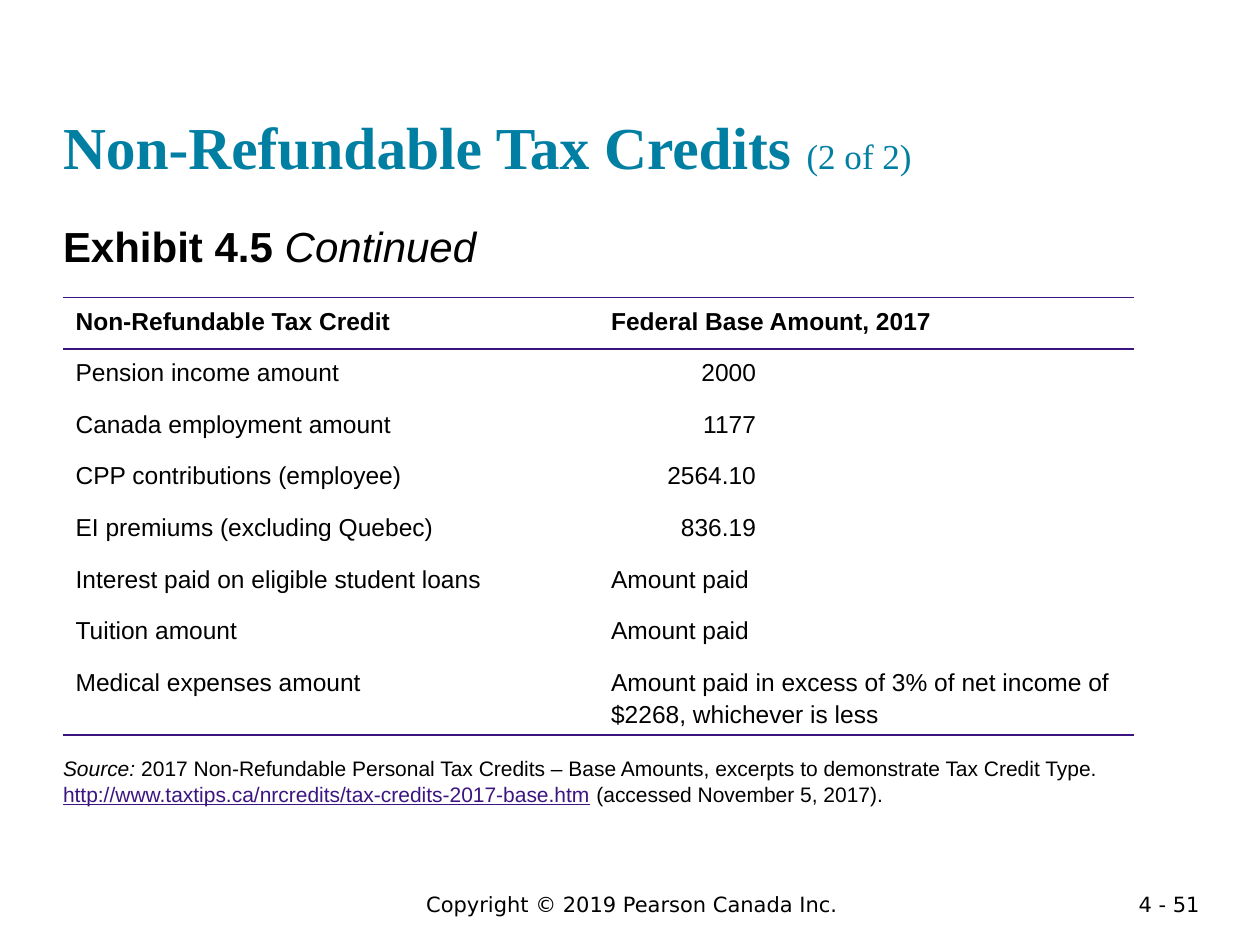
import pptx
import pptx.dml.color
import pptx.enum.text
import pptx.oxml
import pptx.oxml.ns
import pptx.util

Inches, Pt = pptx.util.Inches, pptx.util.Pt
ALIGN, ANCHOR = pptx.enum.text.PP_ALIGN, pptx.enum.text.MSO_ANCHOR
TEAL, PURPLE, BLACK = "007FA3", "3C1581", "000000"

# Content: runs are (text, font settings)
TITLE = [("Non-Refundable Tax Credits ", {"size": Pt(34), "bold": True}),
         ("(2 of 2)", {"size": Pt(20), "bold": False})]
EXHIBIT = [("Exhibit 4.5 ", {"bold": True}), ("Continued", {"italic": True})]
SOURCE = [
    ("Source: ", {"italic": True}),
    ("2017 Non-Refundable Personal Tax Credits – Base Amounts, "
     "excerpts to demonstrate Tax Credit Type. ", {}),
    ("http://www.taxtips.ca/nrcredits/tax-credits-2017-base.htm",
     {"color": PURPLE, "underline": True}),
    (" (accessed November 5, 2017).", {}),
]
CREDITS = [
    ("Non-Refundable Tax Credit", "Federal Base Amount, 2017"),
    ("Pension income amount", "2000"),
    ("Canada employment amount", "1177"),
    ("CPP contributions (employee)", "2564.10"),
    ("EI premiums (excluding Quebec)", "836.19"),
    ("Interest paid on eligible student loans", "Amount paid"),
    ("Tuition amount", "Amount paid"),
    ("Medical expenses amount",
     "Amount paid in excess of 3% of net income of $2268, whichever is less"),
]
FOOTERS = [
    ("Copyright © 2019 Pearson Canada Inc.", (1.64, 7.03, 6.75, 0.3), ALIGN.CENTER),
    ("4 - 51", (8.62, 7.03, 1, 0.22), ALIGN.RIGHT),
]
ROW_HEIGHT, COLUMN_WIDTH = 0.41, 4.25
RULED_EDGES = {0, 1, len(CREDITS)}


def set_color(font, color):
    font.color.rgb = pptx.dml.color.RGBColor.from_string(color)


def set_font(font, name, size, color=BLACK):
    font.name, font.size = name, Pt(size)
    set_color(font, color)


def fill_placeholder(holder, box, runs, name, size, color=BLACK, anchor=ANCHOR.TOP):
    holder.left, holder.top, holder.width, holder.height = map(Inches, box)
    frame = holder.text_frame
    frame.margin_left = frame.margin_top = frame.margin_right = frame.margin_bottom = 0
    frame.word_wrap, frame.vertical_anchor = True, anchor
    frame.auto_size = pptx.enum.text.MSO_AUTO_SIZE.NONE
    paragraph = frame.paragraphs[0]
    properties = paragraph._p.get_or_add_pPr()
    properties.set("marL", "0")
    properties.set("indent", "0")
    pptx.oxml.ns.qn("a:buNone")
    properties.append(pptx.oxml.parse_xml(
        f'<a:buNone {pptx.oxml.ns.nsdecls("a")}/>'))
    paragraph.alignment = ALIGN.LEFT
    paragraph.space_before = Pt(0)
    set_font(paragraph.font, name, size, color)
    for text, settings in runs:
        run = paragraph.add_run()
        run.text = text
        set_font(run.font, name, size, settings.get("color", color))
        for key in settings.keys() - {"color"}:
            setattr(run.font, key, settings[key])


def rule_cell(cell, row):
    ruled = {"T": row in RULED_EDGES, "B": row + 1 in RULED_EDGES}
    for side in "LRTB":
        paint = (f'<a:solidFill><a:srgbClr val="{PURPLE}"/></a:solidFill>'
                 if ruled.get(side) else "<a:noFill/>")
        cell._tc.get_or_add_tcPr().append(pptx.oxml.parse_xml(
            f'<a:ln{side} {pptx.oxml.ns.nsdecls("a")} w="12700">{paint}</a:ln{side}>'))
    cell.fill.background()


deck = pptx.Presentation()
deck.slide_width, deck.slide_height = Inches(10), Inches(7.5)
slide = deck.slides.add_slide(deck.slide_layouts.get_by_name("Two Content"))
title, exhibit, source = slide.placeholders

# Title, exhibit heading and source
fill_placeholder(title, (0.5, 0.24, 9, 1.2), TITLE, "Times New Roman", 34, TEAL,
                 ANCHOR.BOTTOM)
fill_placeholder(exhibit, (0.5, 1.75, 9, 0.5), EXHIBIT, "Arial", 24)
fill_placeholder(source, (0.5, 6, 8.5, 0.5), SOURCE, "Arial", 12)

# Tax credit table
credit_table = slide.shapes.add_table(
    len(CREDITS), 2, Inches(0.5), Inches(2.36), Inches(2 * COLUMN_WIDTH),
    Inches(ROW_HEIGHT * len(CREDITS))).table
credit_table.first_row = True
credit_table.horz_banding = False
for row, values in enumerate(CREDITS):
    for column, text in enumerate(values):
        cell = credit_table.cell(row, column)
        cell.text = text
        paragraph = cell.text_frame.paragraphs[0]
        paragraph.line_spacing = 1.15
        set_font(paragraph.font, "Arial", 14)
        paragraph.font.bold = row == 0
        if text[0].isdigit():
            paragraph.alignment = ALIGN.RIGHT
            cell.margin_right = Inches(3)
        rule_cell(cell, row)

# Footer
for text, box, alignment in FOOTERS:
    footer = slide.shapes.add_textbox(*map(Inches, box)).text_frame
    footer.word_wrap = True
    footer.text = text
    footer.paragraphs[0].alignment = alignment
    set_font(footer.paragraphs[0].font, "DejaVu Sans", 12)

deck.save("out.pptx")
